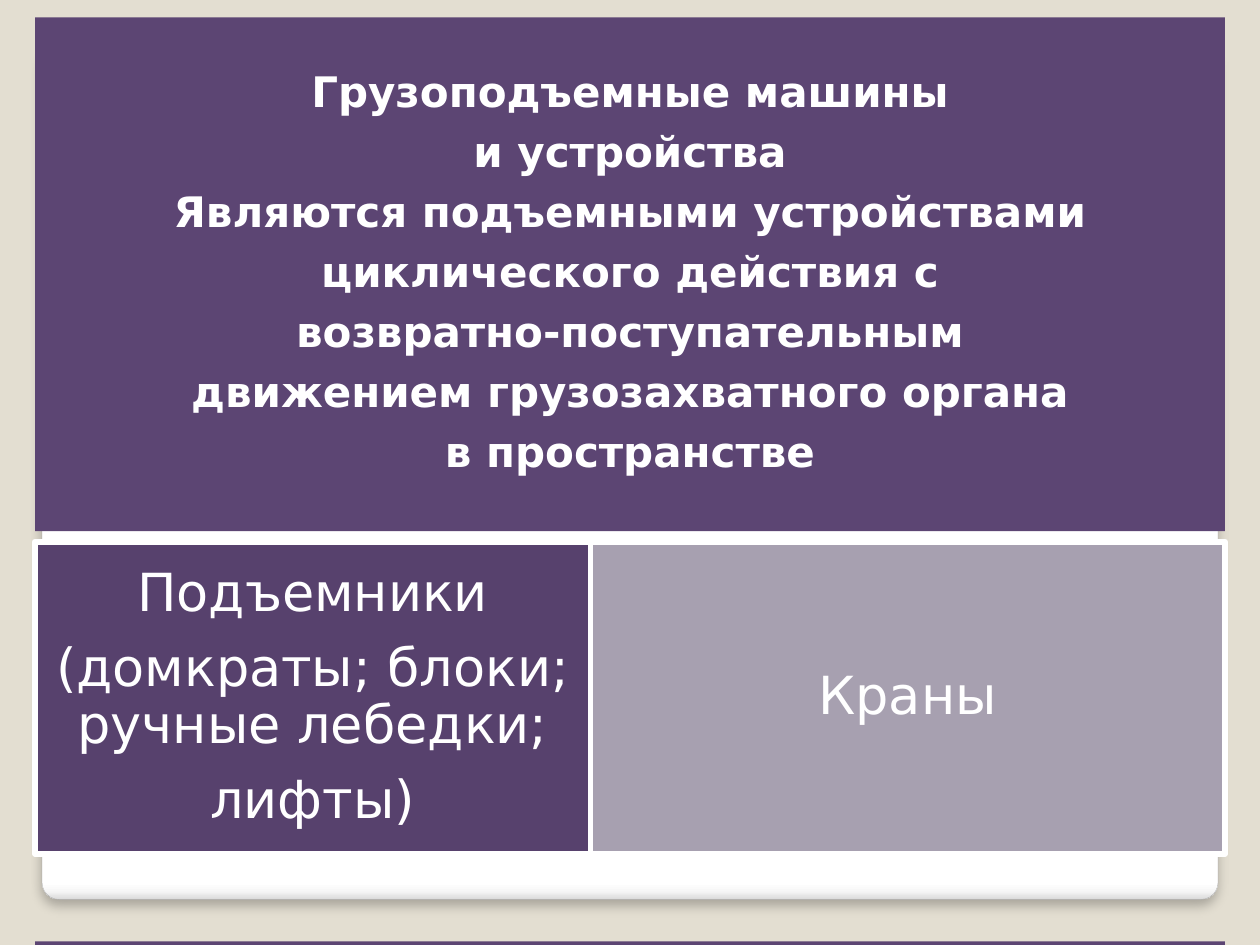
from lxml.etree import SubElement
from pptx import Presentation
from pptx.dml.color import RGBColor
from pptx.enum.shapes import MSO_SHAPE
from pptx.enum.text import MSO_ANCHOR, PP_ALIGN
from pptx.oxml.ns import qn
from pptx.util import Pt

COLORS = {
    "background": "E3DED1",
    "header": "5C4573",
    "lifts": "57416D",
    "cranes": "A7A0B0",
    "white": "FFFFFF",
    "panel_line": "A4A4A4",
    "shadow": "000000",
}
PANEL_STOPS = [(0, "FFFFFF"), (98, "FFFFFF"), (99, "F7F7F7"), (100, "DADADA")]
FONT = "DejaVu Sans"
LEFT, WIDTH = 20, 680
ROW_TOP, ROW_HEIGHT = 309.5, 178.5
LIFTS_WIDTH = 317.5
HEADER_LINES = [
    "Грузоподъемные машины",
    "и устройства",
    "Являются подъемными устройствами",
    "циклического действия с",
    "возвратно-поступательным",
    "движением грузозахватного органа",
    "в пространстве",
]
LIFTS_LINES = ["Подъемники", "(домкраты; блоки; ручные лебедки;", "лифты)"]


def color(name):
    """Return the palette colour with the given name."""
    return RGBColor.from_string(COLORS[name])


def add_color(parent, value, alpha=100):
    """Append an RGB colour element with an opacity in percent."""
    element = SubElement(parent, qn("a:srgbClr"), val=value)
    if alpha < 100:
        SubElement(element, qn("a:alpha"), val=str(alpha * 1000))


def add_panel(slide):
    """Add the rounded white panel with its gradient and soft shadow."""
    panel = slide.shapes.add_shape(
        MSO_SHAPE.ROUNDED_RECTANGLE, Pt(24), Pt(26), Pt(672), Pt(488))
    panel.adjustments[0] = 0.02
    panel.line.color.rgb = color("panel_line")
    panel.line.width = Pt(0.16)
    panel.fill.gradient()
    panel.fill.gradient_angle = 270
    properties = panel.element.spPr
    stops = properties.find(qn("a:gradFill")).find(qn("a:gsLst"))
    for stop in list(stops):
        stops.remove(stop)
    for position, value in PANEL_STOPS:
        add_color(SubElement(stops, qn("a:gs"), pos=str(position * 1000)), value)
    panel.shadow.inherit = False
    shadow = SubElement(
        properties.find(qn("a:effectLst")), qn("a:outerShdw"),
        blurRad=str(Pt(6)), dist=str(Pt(4)), dir="5400000", rotWithShape="0")
    add_color(shadow, COLORS["shadow"], 25)


def add_block(slide, left, top, width, height, fill, outlined=False):
    """Add a flat rectangle, with a white outline if asked."""
    block = slide.shapes.add_shape(
        MSO_SHAPE.RECTANGLE, Pt(left), Pt(top), Pt(width), Pt(height))
    block.shadow.inherit = False
    block.fill.solid()
    block.fill.fore_color.rgb = color(fill)
    if outlined:
        block.line.color.rgb = color("white")
        block.line.width = Pt(3.35)
    else:
        block.line.fill.background()
    return block


def write_lines(shape, lines, size, inset, bold=False):
    """Write centred white paragraphs into a shape."""
    frame = shape.text_frame
    frame.word_wrap = True
    frame.vertical_anchor = MSO_ANCHOR.MIDDLE
    frame.margin_left = frame.margin_right = Pt(inset)
    frame.margin_top = frame.margin_bottom = Pt(inset)
    for index, line in enumerate(lines):
        paragraph = frame.add_paragraph() if index else frame.paragraphs[0]
        paragraph.alignment = PP_ALIGN.CENTER
        paragraph.line_spacing = 0.9
        paragraph.space_after = Pt(size * 0.35)
        run = paragraph.add_run()
        run.text = line
        run.font.name = FONT
        run.font.size = Pt(size)
        run.font.bold = bold
        run.font.color.rgb = color("white")


def main():
    """Build the slide and save it."""
    presentation = Presentation()
    presentation.slide_width, presentation.slide_height = Pt(720), Pt(540)
    slide = presentation.slides.add_slide(presentation.slide_layouts[6])
    slide.background.fill.solid()
    slide.background.fill.fore_color.rgb = color("background")
    add_panel(slide)

    header = add_block(slide, LEFT, 10, WIDTH, 293.5, "header")
    write_lines(header, HEADER_LINES, 24, 7.2, bold=True)
    lifts = add_block(
        slide, LEFT, ROW_TOP, LIFTS_WIDTH, ROW_HEIGHT, "lifts", outlined=True)
    write_lines(lifts, LIFTS_LINES, 30, 8.64)
    cranes = add_block(
        slide, LEFT + LIFTS_WIDTH, ROW_TOP, WIDTH - LIFTS_WIDTH, ROW_HEIGHT,
        "cranes", outlined=True)
    write_lines(cranes, ["Краны"], 30, 8.64)
    add_block(slide, LEFT, 538, WIDTH, 36.5, "header")

    presentation.save("out.pptx")


if __name__ == "__main__":
    main()
